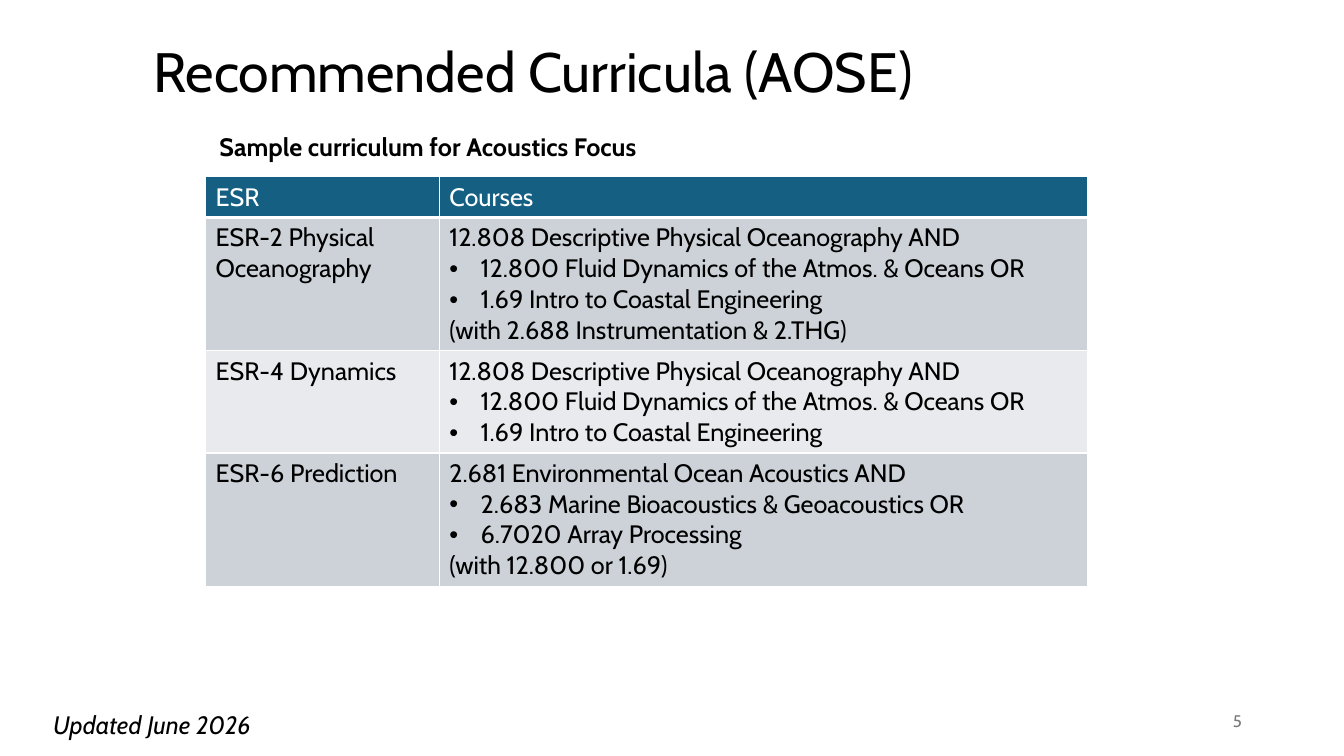
from dataclasses import dataclass

import lxml.etree
import pptx
import pptx.dml.color
import pptx.enum.text
import pptx.oxml.ns
import pptx.util
from pptx.util import Cm

Align = pptx.enum.text.PP_ALIGN
Anchor = pptx.enum.text.MSO_ANCHOR


@dataclass(frozen=True)
class Theme:
    font: str = "Cabin"
    title_size: float = 39.6
    body_size: float = 18
    number_size: float = 12
    black: str = "000000"
    white: str = "FFFFFF"
    grey: str = "797979"
    header: str = "156082"
    bands: tuple[str, str] = ("CCD2D8", "E8EAED")


THEME = Theme()


@dataclass(frozen=True)
class Line:
    text: str
    bullet: bool = False


@dataclass(frozen=True)
class Requirement:
    name: str
    courses: tuple[Line, ...]


@dataclass(frozen=True)
class Label:
    text: str
    left: float
    top: float
    width: float
    size: float = THEME.body_size
    color: str = THEME.black
    bold: bool = False
    italic: bool = False
    align: Align = Align.LEFT
    anchor: Anchor = Anchor.TOP
    fitted: bool = True


PHYSICAL_COURSES = (
    Line("12.808 Descriptive Physical Oceanography AND"),
    Line("12.800 Fluid Dynamics of the Atmos. & Oceans OR", True),
    Line("1.69 Intro to Coastal Engineering", True),
)
REQUIREMENTS = (
    Requirement(
        "ESR-2 Physical Oceanography",
        PHYSICAL_COURSES + (Line("(with 2.688 Instrumentation & 2.THG)"),),
    ),
    Requirement("ESR-4 Dynamics", PHYSICAL_COURSES),
    Requirement(
        "ESR-6 Prediction",
        (
            Line("2.681 Environmental Ocean Acoustics AND"),
            Line("2.683 Marine Bioacoustics & Geoacoustics OR", True),
            Line("6.7020 Array Processing", True),
            Line("(with 12.800 or 1.69)"),
        ),
    ),
)
LABELS = (
    Label("5", 23.93, 17.65, 7.62, THEME.number_size, THEME.grey,
          align=Align.RIGHT, anchor=Anchor.MIDDLE, fitted=False),
    Label("Sample curriculum for Acoustics Focus", 5.28, 3.18, 11.96, bold=True),
    Label("Updated June 2026", 1.09, 17.75, 5.79, italic=True),
)
COLUMN_WIDTHS = (5.89, 16.33)
ROW_PADDING = 0.25
LINE_HEIGHT = 0.775


def add_run(paragraph, text: str, size: float, color: str,
            bold: bool = False, italic: bool = False) -> None:
    run = paragraph.add_run()
    run.text = text
    run.font.name = THEME.font
    run.font.size = pptx.util.Pt(size)
    run.font.bold = bold
    run.font.italic = italic
    run.font.color.rgb = pptx.dml.color.RGBColor.from_string(color)


def add_title(slide, text: str) -> None:
    title = slide.shapes.title
    title.left, title.top = Cm(3.61), Cm(1.04)
    title.width, title.height = Cm(25.4), Cm(1.7)
    frame = title.text_frame
    frame.auto_size = pptx.enum.text.MSO_AUTO_SIZE.NONE
    frame.vertical_anchor = Anchor.MIDDLE
    paragraph = frame.paragraphs[0]
    paragraph.alignment = Align.LEFT
    paragraph.line_spacing = 0.9
    add_run(paragraph, text, THEME.title_size, THEME.black)


def add_label(slide, label: Label) -> None:
    shape = slide.shapes.add_textbox(
        Cm(label.left), Cm(label.top), Cm(label.width), Cm(1.02))
    frame = shape.text_frame
    frame.word_wrap = not label.fitted
    if label.fitted:
        frame.auto_size = pptx.enum.text.MSO_AUTO_SIZE.SHAPE_TO_FIT_TEXT
    frame.vertical_anchor = label.anchor
    paragraph = frame.paragraphs[0]
    paragraph.alignment = label.align
    add_run(paragraph, label.text, label.size, label.color, label.bold, label.italic)


def add_bullet(paragraph) -> None:
    properties = paragraph._p.get_or_add_pPr()
    properties.set("marL", str(Cm(0.79)))
    properties.set("indent", str(-Cm(0.79)))
    for tag, name, value in (("a:buFont", "typeface", "Arial"), ("a:buChar", "char", "•")):
        element = lxml.etree.SubElement(properties, pptx.oxml.ns.qn(tag))
        element.set(name, value)


def add_borders(cell, bottom_width: float) -> None:
    properties = cell._tc.get_or_add_tcPr()
    widths = {"a:lnL": 1, "a:lnR": 1, "a:lnT": 1, "a:lnB": bottom_width}
    for tag, width in widths.items():
        border = lxml.etree.SubElement(properties, pptx.oxml.ns.qn(tag))
        border.set("w", str(pptx.util.Pt(width)))
        fill = lxml.etree.SubElement(border, pptx.oxml.ns.qn("a:solidFill"))
        color = lxml.etree.SubElement(fill, pptx.oxml.ns.qn("a:srgbClr"))
        color.set("val", THEME.white)


def fill_cell(cell, lines: tuple[Line, ...], fill: str, color: str,
              bottom_width: float) -> None:
    add_borders(cell, bottom_width)
    cell.fill.solid()
    cell.fill.fore_color.rgb = pptx.dml.color.RGBColor.from_string(fill)
    for index, line in enumerate(lines):
        frame = cell.text_frame
        paragraph = frame.add_paragraph() if index else frame.paragraphs[0]
        if line.bullet:
            add_bullet(paragraph)
        add_run(paragraph, line.text, THEME.body_size, color)


def add_curriculum(slide, requirements: tuple[Requirement, ...]) -> None:
    rows = (Requirement("ESR", (Line("Courses"),)),) + requirements
    heights = [ROW_PADDING + LINE_HEIGHT * len(row.courses) for row in rows]
    table = slide.shapes.add_table(
        len(rows), len(COLUMN_WIDTHS), Cm(5.18), Cm(4.45),
        Cm(sum(COLUMN_WIDTHS)), Cm(sum(heights))).table
    for column, width in zip(table.columns, COLUMN_WIDTHS):
        column.width = Cm(width)
    for index, (row, height) in enumerate(zip(rows, heights)):
        table.rows[index].height = Cm(height)
        is_header = index == 0
        fill = THEME.header if is_header else THEME.bands[(index - 1) % 2]
        color = THEME.white if is_header else THEME.black
        for column, lines in enumerate(((Line(row.name),), row.courses)):
            fill_cell(table.cell(index, column), lines, fill, color,
                      3 if is_header else 1)


def main() -> None:
    presentation = pptx.Presentation()
    presentation.slide_width = Cm(33.87)
    presentation.slide_height = Cm(19.05)
    slide = presentation.slides.add_slide(presentation.slide_layouts[5])
    add_title(slide, "Recommended Curricula (AOSE)")
    add_curriculum(slide, REQUIREMENTS)
    for label in LABELS:
        add_label(slide, label)
    presentation.save("out.pptx")


if __name__ == "__main__":
    main()
